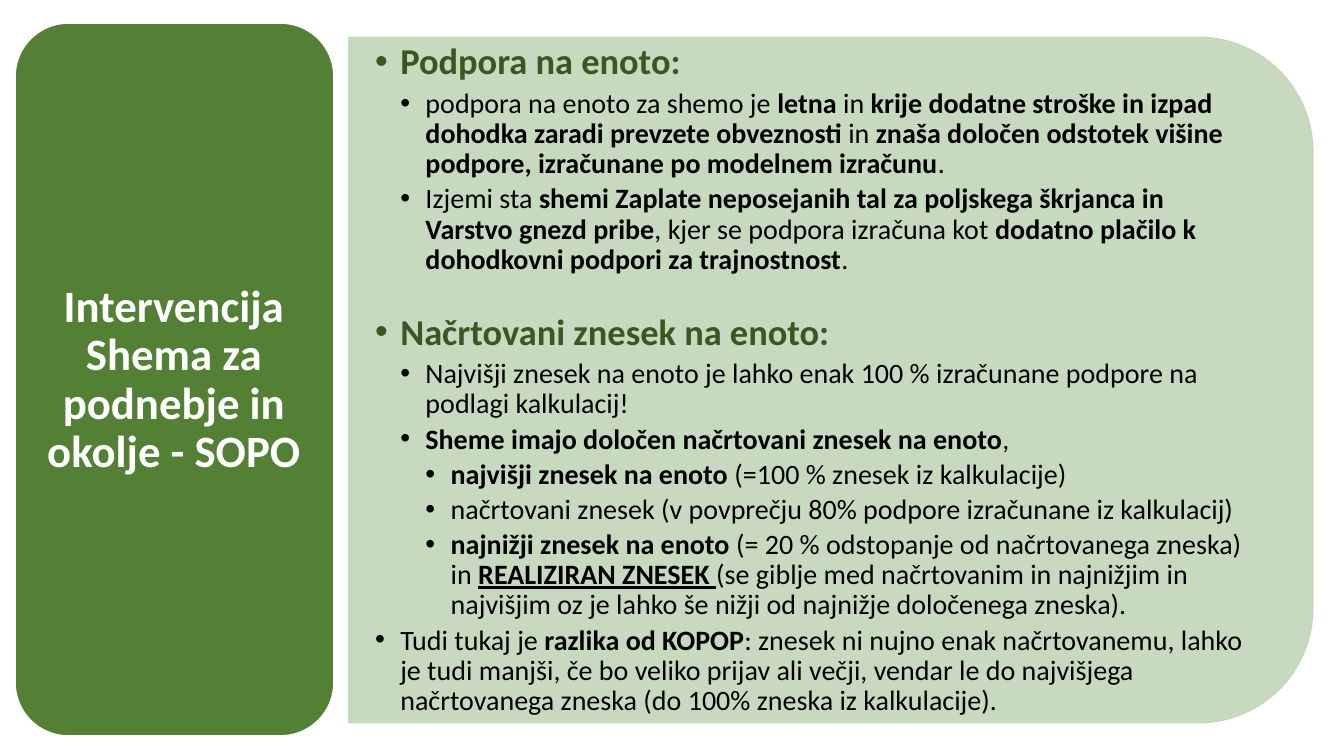
from lxml import etree
from pptx import Presentation
from pptx import util as u
from pptx.dml.color import RGBColor
from pptx.enum import shapes, text
from pptx.oxml import ns

WIDTH, HEIGHT = u.Inches(13.33), u.Inches(7.5)
INDENT = u.Inches(0.25)
FONT = "Calibri"

PALE_GREEN = RGBColor(0xC2, 0xD7, 0xB9)
GREEN = RGBColor(0x53, 0x80, 0x35)
DARK_GREEN = RGBColor(0x38, 0x57, 0x23)
WHITE = RGBColor(0xFF, 0xFF, 0xFF)
BLACK = RGBColor(0, 0, 0)

# Boxes as left, top, width, height in hundredths of the slide
TITLE_PANEL = (1.13, 3.07, 23.71, 94.27)
TITLE_TEXT = (2.25, 5.2, 21.38, 90.27)
BODY_PANEL = (25.96, 4.93, 71.72, 90.67)
BODY_TEXT = (25.88, 4.93, 69.24, 90.67)

TITLE = "Intervencija Shema za podnebje in okolje - SOPO"

# Level and wording; every second part between asterisks is bold,
# and a bold part that starts with an underscore is underlined
HEADING = 0
BODY = [
    (HEADING, "Podpora na enoto:"),
    (2, "podpora na enoto za shemo je *letna* in *krije dodatne stroške in izpad "
        "dohodka zaradi prevzete obveznosti* in *znaša določen odstotek višine "
        "podpore, izračunane po modelnem izračunu*."),
    (2, "Izjemi sta *shemi Zaplate neposejanih tal za poljskega škrjanca in "
        "Varstvo gnezd pribe*, kjer se podpora izračuna kot *dodatno plačilo k "
        "dohodkovni podpori za trajnostnost*."),
    (HEADING, "Načrtovani znesek na enoto:"),
    (2, "Najvišji znesek na enoto je lahko enak 100 % izračunane podpore na "
        "podlagi kalkulacij!"),
    (2, "*Sheme imajo določen načrtovani znesek na enoto*,"),
    (3, "*najvišji znesek na enoto *(=100 % znesek iz kalkulacije)"),
    (3, "načrtovani znesek (v povprečju 80% podpore izračunane iz kalkulacij)"),
    (3, "*najnižji znesek na enoto *(= 20 % odstopanje od načrtovanega zneska) in "
        "*_REALIZIRAN ZNESEK *(se giblje med načrtovanim in najnižjim in "
        "najvišjim oz je lahko še nižji od najnižje določenega zneska)."),
    (1, "Tudi tukaj je *razlika od KOPOP*: znesek ni nujno enak načrtovanemu, "
        "lahko je tudi manjši, če bo veliko prijav ali večji, vendar le do "
        "najvišjega načrtovanega zneska (do 100% zneska iz kalkulacije)."),
]


def place(box):
    """Turn hundredths of the slide into lengths."""
    sides = (WIDTH, HEIGHT, WIDTH, HEIGHT)
    return [round(side * share / 100) for side, share in zip(sides, box)]


def add_panel(page, kind, box, fill, line, turned=False):
    left, top, width, height = place(box)
    if turned:  # the frame of a quarter-turned shape has its sides swapped
        left, top = left + (width - height) // 2, top + (height - width) // 2
        width, height = height, width
    panel = page.shapes.add_shape(kind, left, top, width, height)
    panel.rotation = 90 if turned else 0
    panel.shadow.inherit = False
    panel.fill.solid()
    panel.fill.fore_color.rgb = fill
    panel.line.color.rgb = line
    panel.line.width = u.Pt(1)
    return panel


def set_opacity(panel, percent):
    for color in panel._element.spPr.iter(ns.qn("a:srgbClr")):
        etree.SubElement(color, ns.qn("a:alpha"), val=str(percent * 1000))


def add_text_box(page, box, side_inset):
    frame = page.shapes.add_textbox(*place(box)).text_frame
    frame.word_wrap = True
    frame.vertical_anchor = text.MSO_ANCHOR.MIDDLE
    frame.margin_left = frame.margin_right = u.Inches(side_inset)
    frame.margin_top = frame.margin_bottom = 0
    return frame


def write(para, wording, size=20, color=BLACK, bold=False, align=None,
          before=0, after=3.5):
    para.alignment = align
    para.line_spacing = 0.9
    para.space_before, para.space_after = u.Pt(before), u.Pt(after)
    for number, part in enumerate(wording.split("*")):
        if not part:
            continue
        span = para.add_run()
        span.text = part.lstrip("_")
        span.font.name = FONT
        span.font.size = u.Pt(size)
        span.font.color.rgb = color
        span.font.bold = bold or number % 2 == 1
        if part.startswith("_"):
            span.font.underline = True


def add_bullet(para, level):
    props = para._p.get_or_add_pPr()
    props.set("marL", str(INDENT * level))
    props.set("indent", str(-INDENT))
    etree.SubElement(props, ns.qn("a:buFont"), typeface="Arial")
    etree.SubElement(props, ns.qn("a:buChar"), char="•")


def add_body(page):
    frame = add_text_box(page, BODY_TEXT, 0.27)
    for number, (level, wording) in enumerate(BODY):
        para = frame.add_paragraph() if number else frame.paragraphs[0]
        if level == HEADING:
            write(para, wording, size=26, color=DARK_GREEN, bold=True,
                  before=24 if number else 0, after=4.5)
        else:
            write(para, wording)
        add_bullet(para, max(level, 1))


def main():
    deck = Presentation()
    deck.slide_width, deck.slide_height = WIDTH, HEIGHT
    page = deck.slides.add_slide(deck.slide_layouts[6])

    # Body on the right
    body_panel = add_panel(page, shapes.MSO_SHAPE.ROUND_2_SAME_RECTANGLE,
                           BODY_PANEL, PALE_GREEN, PALE_GREEN, turned=True)
    set_opacity(body_panel, 90)
    add_body(page)

    # Title on the left
    add_panel(page, shapes.MSO_SHAPE.ROUNDED_RECTANGLE, TITLE_PANEL, GREEN, WHITE)
    title = add_text_box(page, TITLE_TEXT, 0.13)
    write(title.paragraphs[0], TITLE, size=32, color=WHITE, bold=True,
          align=text.PP_ALIGN.CENTER, after=0)

    deck.save("out.pptx")


if __name__ == "__main__":
    main()
